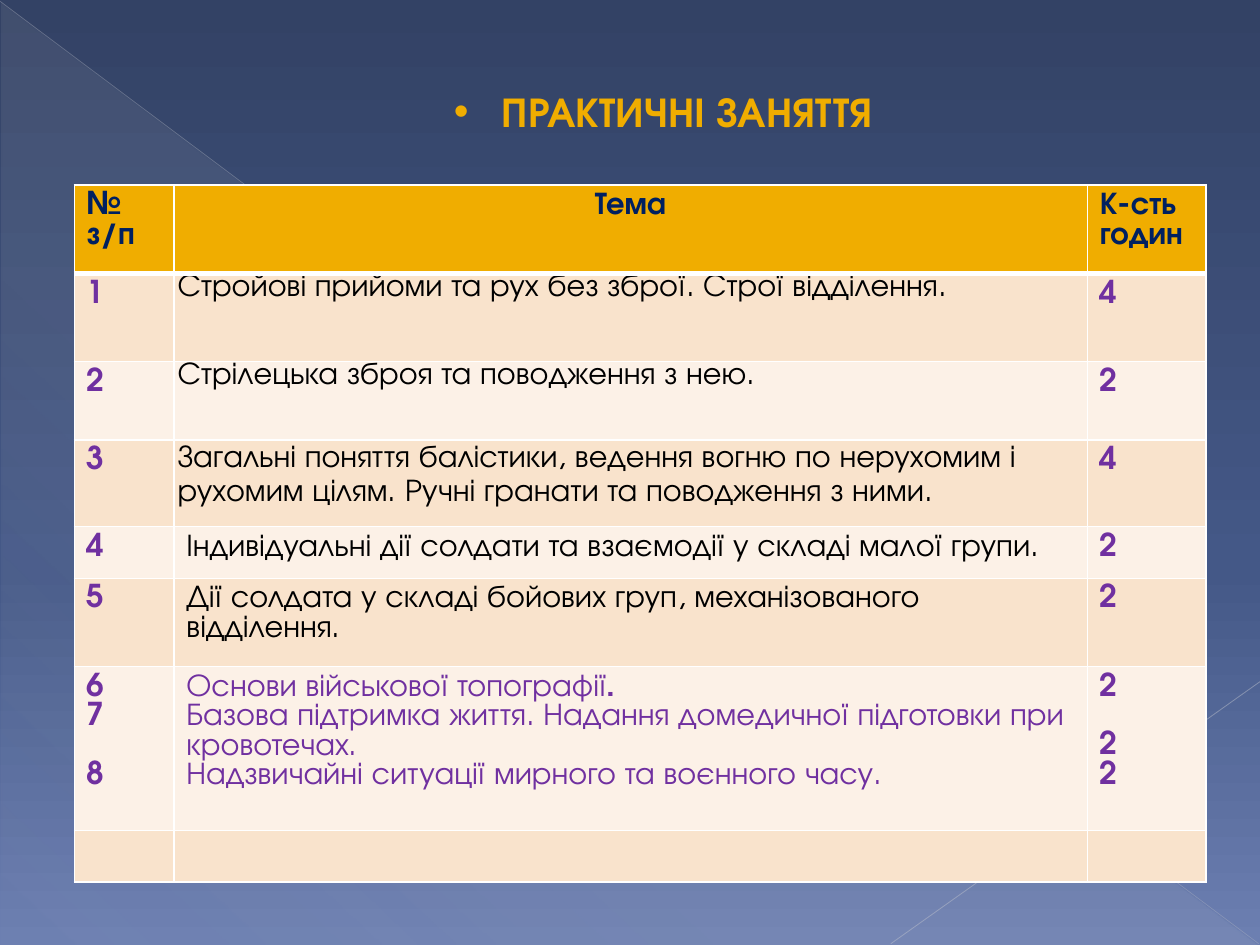
from lxml.etree import SubElement, fromstring
from pptx import Presentation
from pptx.dml.color import RGBColor
from pptx.enum.shapes import MSO_CONNECTOR as Connector, MSO_SHAPE as Shape
from pptx.enum.text import MSO_ANCHOR as Anchor, PP_ALIGN as Align
from pptx.oxml.ns import nsdecls, qn
from pptx.util import Inches, Pt

# Content
WIDTH, HEIGHT = 10, 7.5
FONT = "TeX Gyre Adventor"
COLORS = {"gold": "F0AD00", "navy": "002060", "purple": "7030A0", "black": "000000",
          "white": "FFFFFF", "band": "F9E3CC", "pale": "FCF1E7"}
SKY = [(0, "334265", 100), (60, "445887", 100), (100, "6C7FB1", 100)]
VEIL = [(0, "D4D4D6", 10), (70, "D4D4D6", 8), (100, "D4D4D6", 1)]
RAYS = [((0, 0.01), (9.99, 7.49), "B9BDC8", 0.39, 35),
        ((10, 5.41), (7.07, 7.49), "C1C4CE", 0.47, 45)]
TITLE = "ПРАКТИЧНІ ЗАНЯТТЯ"
HEADER = [["№", "з/п"], ["Тема"], ["К-сть", "годин"]]
# Each lesson row: numbers, topics, hours
LESSONS = [
    (["1"], ["Стройові прийоми та рух без зброї. Строї відділення."], ["4"]),
    (["2"], ["Стрілецька зброя та поводження з нею."], ["2"]),
    (["3"], ["Загальні поняття балістики, ведення вогню по нерухомим і рухомим цілям. "
             "Ручні гранати та поводження з ними."], ["4"]),
    (["4"], ["Індивідуальні дії солдати та взаємодії у складі малої групи."], ["2"]),
    (["5"], ["Дії солдата у складі бойових груп, механізованого відділення."], ["2"]),
    (["6", "7", "8"],
     ["Основи військової топографії.",
      "Базова підтримка життя. Надання домедичної підготовки при кровотечах.",
      "Надзвичайні ситуації мирного та воєнного часу."], ["2", "2", "2"]),
    ([], [], []),
]
COLUMNS = [0.79, 7.25, 0.94]
ROWS = [0.7, 0.7, 0.62, 0.69, 0.41, 0.7, 1.3, 0.41]
TIGHT_ROWS, LOOSE_ROW, GROUP_ROW = (1, 2, 3), 3, 6
LINE = Pt(16.8)
TIGHT = {"margin_left": Inches(0.03), "margin_right": Inches(0.03),
         "margin_top": 0, "margin_bottom": 0}


def set_values(target, values):
    for name, value in values.items():
        setattr(target, name, value)


def fill_gradient(holder, stops, angle):
    """Swap the solid fill inside holder for a gradient."""
    marks = "".join(
        f'<a:gs pos="{place * 1000}"><a:srgbClr val="{color}">'
        f'<a:alpha val="{alpha * 1000}"/></a:srgbClr></a:gs>' for place, color, alpha in stops)
    gradient = fromstring(
        f'<a:gradFill {nsdecls("a")} rotWithShape="1"><a:gsLst>{marks}</a:gsLst>'
        f'<a:lin ang="{angle * 60000}" scaled="0"/></a:gradFill>')
    solid = holder.find(qn("a:solidFill"))
    holder.replace(solid, gradient)


def add_span(para, text, size, color, bold):
    span = para.add_run()
    span.text = text
    set_values(span.font, {"name": FONT, "size": Pt(size), "bold": bold})
    span.font.color.rgb = RGBColor.from_string(COLORS[color])


def set_borders(cell, bottom, top):
    properties = cell._tc.get_or_add_tcPr()
    widths = {"lnL": 1, "lnR": 1, "lnT": top, "lnB": bottom}
    for index, (side, width) in enumerate(widths.items()):
        properties.insert(index, fromstring(
            f'<a:{side} {nsdecls("a")} w="{Pt(width)}"><a:solidFill>'
            f'<a:srgbClr val="{COLORS["white"]}"/></a:solidFill></a:{side}>'))


def fill_cell(cell, lines, row, column):
    header, topic = row == 0, column == 1
    color = "gold" if header else "band" if row % 2 else "pale"
    cell.fill.solid()
    cell.fill.fore_color.rgb = RGBColor.from_string(COLORS[color])
    set_borders(cell, 3 if header else 1, 3 if row == 1 else 1)
    if topic and row in TIGHT_ROWS:
        set_values(cell, TIGHT)
    ink = "navy" if header else "black" if topic and row != GROUP_ROW else "purple"
    frame = cell.text_frame
    frame.paragraphs[0].font.size = Pt(18)
    for index, line in enumerate(lines):
        para = frame.add_paragraph() if index else frame.paragraphs[0]
        if topic and header:
            para.alignment = Align.CENTER
        if topic and row == LOOSE_ROW:
            para.line_spacing = 1.15
        # Numbers and hours skip the second line of the wrapped topic
        if row == GROUP_ROW and index == (2 if column == 0 else 1) and not topic:
            para.space_before = LINE
        if topic and row == GROUP_ROW and index == 0:
            add_span(para, line[:-1], 18, ink, False)
            add_span(para, line[-1], 18, ink, True)
        else:
            add_span(para, line, 18, ink, header or not topic)


deck = Presentation()
set_values(deck, {"slide_width": Inches(WIDTH), "slide_height": Inches(HEIGHT)})
page = deck.slides.add_slide(deck.slide_layouts[6])

# Background: sky, veil and thin rays
page.background.fill.solid()
fill_gradient(page.element.find(".//" + qn("p:bgPr")), SKY, 90)
veil = page.shapes.add_shape(Shape.RIGHT_TRIANGLE, *map(Inches, (0.01, 0.02, 9.98, 7.48)))
veil.shadow.inherit = False
veil.line.fill.background()
veil.fill.solid()
fill_gradient(veil.element.spPr, VEIL, 133)
for start, end, color, width, alpha in RAYS:
    ray = page.shapes.add_connector(Connector.STRAIGHT, *map(Inches, start + end))
    ray.line.width = Pt(width)
    ray.line.color.rgb = RGBColor.from_string(color)
    tint = ray.element.spPr.find(".//" + qn("a:srgbClr"))
    SubElement(tint, qn("a:alpha")).set("val", str(alpha * 1000))
    SubElement(ray.element.spPr, qn("a:effectLst"))

# Title with bullet
box = page.shapes.add_textbox(*map(Inches, (1.43, 0.63, 7.67, 0.5)))
set_values(box.text_frame, {"word_wrap": True, "vertical_anchor": Anchor.TOP})
para = box.text_frame.paragraphs[0]
para.alignment = Align.CENTER
add_span(para, TITLE, 24, "gold", True)
bullet = para._p.get_or_add_pPr()
bullet.set("marL", str(Inches(0.38)))
bullet.set("indent", str(-Inches(0.38)))
SubElement(bullet, qn("a:buFont")).set("typeface", "Arial")
SubElement(bullet, qn("a:buChar")).set("char", "•")

# Lesson table
table = page.shapes.add_table(
    len(ROWS), len(COLUMNS),
    *map(Inches, (0.59, 1.47, sum(COLUMNS), sum(ROWS)))).table
for column, width in zip(table.columns, COLUMNS):
    column.width = Inches(width)
for row, height in zip(table.rows, ROWS):
    row.height = Inches(height)
for row, entries in enumerate([HEADER, *LESSONS]):
    for column, lines in enumerate(entries):
        fill_cell(table.cell(row, column), lines, row, column)

deck.save("out.pptx")
